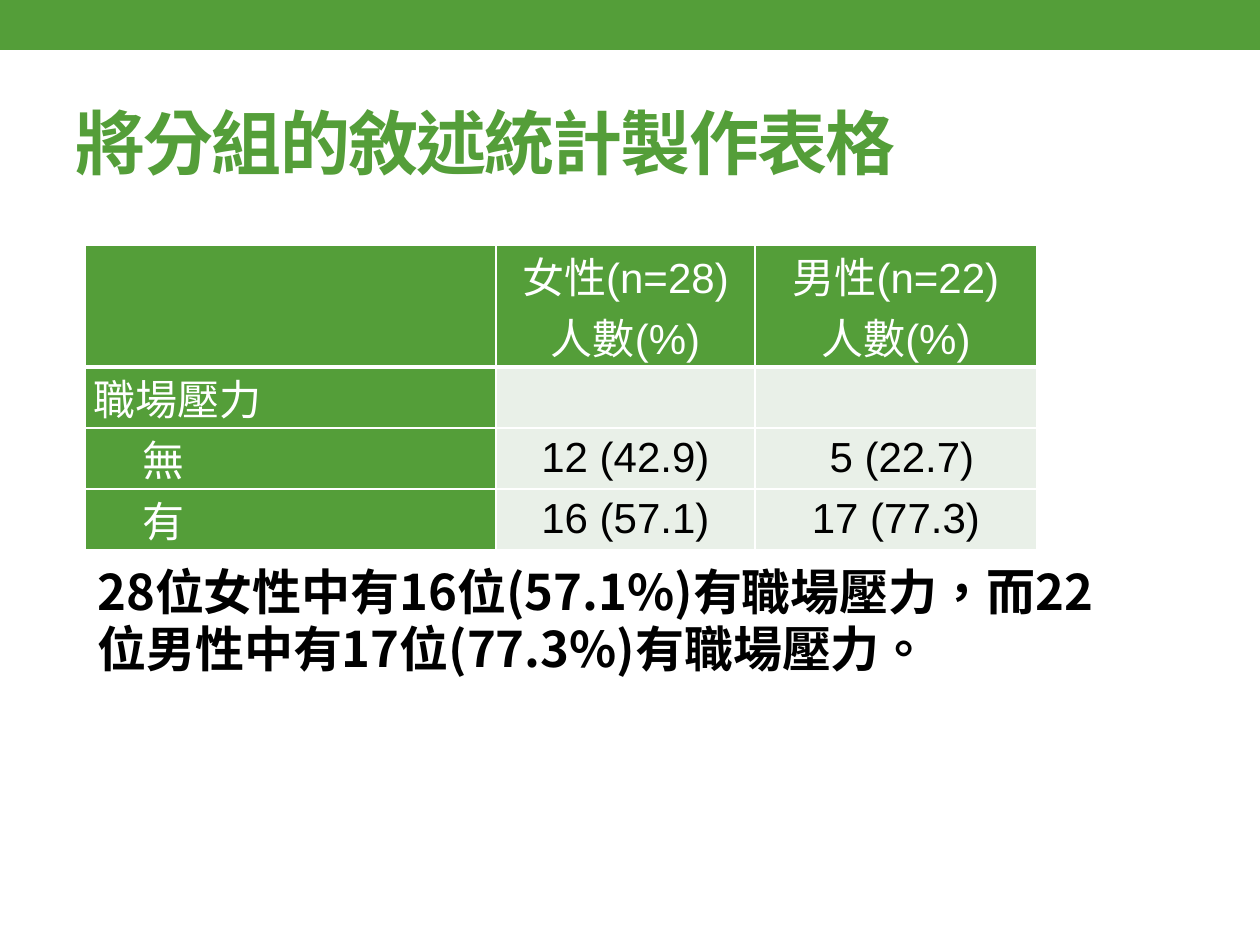
from lxml import etree
from pptx import Presentation
from pptx.dml.color import RGBColor
from pptx.enum.lang import MSO_LANGUAGE_ID
from pptx.enum.shapes import MSO_SHAPE
from pptx.enum.text import MSO_ANCHOR, PP_ALIGN
from pptx.oxml.ns import qn
from pptx.util import Emu, Pt

# Content
TITLE = "將分組的敘述統計製作表格"
ROWS = [
    ["", "女性(n=28)\n人數(%)", "男性(n=22)\n人數(%)"],
    ["職場壓力", "", ""],
    ["無", "12 (42.9)", "5 (22.7)"],
    ["有", "16 (57.1)", "17 (77.3)"],
]
SUMMARY = "28位女性中有16位(57.1%)有職場壓力，而22位男性中有17位(77.3%)有職場壓力。"

# Layout in px
PX = 914400 // 126
PAGE = (1260, 945)
BAND = (0, 0, 1260, 50)
TITLE_BOX = (63, 73, 1134, 136)
TABLE_BOX = (85, 245, 952, 303)
SUMMARY_BOX = (85, 556, 1022, 131)
COLUMN_WIDTHS = [411, 259, 282]
ROW_HEIGHTS = [121, 61, 61, 60]
CELL_INSET = 9
INDENTS = {(2, 0): 49, (3, 0): 49, (2, 2): 12}

GREEN = RGBColor(0x54, 0x9E, 0x39)
PALE = RGBColor(0xE9, 0xF0, 0xE8)
WHITE = RGBColor(0xFF, 0xFF, 0xFF)
BLACK = RGBColor(0, 0, 0)
LATIN_FONT = "Arial"
CJK_FONT = "Noto Sans CJK SC"
CHINESE = MSO_LANGUAGE_ID.TRADITIONAL_CHINESE
LEFT, CENTER = PP_ALIGN.LEFT, PP_ALIGN.CENTER
TOP, MIDDLE = MSO_ANCHOR.TOP, MSO_ANCHOR.MIDDLE
RECTANGLE = MSO_SHAPE.RECTANGLE


def emu(box):
    return [Emu(length * PX) for length in box]


def add_run(para, text, size, color, bold=False, name=LATIN_FONT):
    run = para.add_run()
    run.text = text
    font = run.font
    font.name, font.size, font.bold = name, Pt(size), bold
    font.color.rgb = color
    font.language_id = CHINESE
    return run


def set_borders(cell, bottom_width):
    properties = cell._tc.get_or_add_tcPr()
    widths = {"a:lnL": 1, "a:lnR": 1, "a:lnT": 1, "a:lnB": bottom_width}
    for index, (tag, width) in enumerate(widths.items()):
        line = etree.Element(qn(tag), w=str(Pt(width)))
        fill = etree.SubElement(line, qn("a:solidFill"))
        etree.SubElement(fill, qn("a:srgbClr"), val=str(WHITE))
        properties.insert(index, line)


def fill_cell(cell, text, row, column):
    is_header = row == 0 or column == 0
    cell.fill.solid()
    cell.fill.fore_color.rgb = GREEN if is_header else PALE
    set_borders(cell, 3 if row == 0 else 1)
    cell.margin_left = cell.margin_right = Emu(CELL_INSET * PX)
    cell.margin_top = cell.margin_bottom = 0
    cell.vertical_anchor = TOP if is_header else MIDDLE
    for index, line in enumerate(text.split("\n")):
        frame = cell.text_frame
        para = frame.add_paragraph() if index else frame.paragraphs[0]
        para.alignment = CENTER if column else LEFT
        para.font.size = Pt(24)
        indent = INDENTS.get((row, column), 0)
        para._p.get_or_add_pPr().set("marL", str(indent * PX))
        if line:
            add_run(para, line, 24, WHITE if is_header else BLACK)


deck = Presentation()
deck.slide_width, deck.slide_height = emu(PAGE)
slide = deck.slides.add_slide(deck.slide_layouts[5])

# Top band
band = slide.shapes.add_shape(RECTANGLE, *emu(BAND))
band.shadow.inherit = False
band.fill.solid()
band.fill.fore_color.rgb = GREEN
band.line.fill.background()

# Title
title = slide.shapes.title
title.left, title.top, title.width, title.height = emu(TITLE_BOX)
title.text_frame.vertical_anchor = MIDDLE
title_para = title.text_frame.paragraphs[0]
title_para.alignment = LEFT
title_run = add_run(title_para, TITLE, 40, GREEN, bold=True)
title_run.font._element.set("spc", "-100")

# Table of counts by group
table = slide.shapes.add_table(len(ROWS), len(COLUMN_WIDTHS), *emu(TABLE_BOX)).table
for column, width in zip(table.columns, emu(COLUMN_WIDTHS)):
    column.width = width
for table_row, height in zip(table.rows, emu(ROW_HEIGHTS)):
    table_row.height = height
for row, texts in enumerate(ROWS):
    for column, text in enumerate(texts):
        fill_cell(table.cell(row, column), text, row, column)

# Summary sentence
summary = slide.shapes.add_textbox(*emu(SUMMARY_BOX))
summary.text_frame.word_wrap = True
summary_para = summary.text_frame.paragraphs[0]
summary_para.line_spacing = Pt(33)
summary_run = add_run(summary_para, SUMMARY, 28, BLACK, bold=True, name=CJK_FONT)
east_asian = etree.Element(qn("a:ea"), typeface=CJK_FONT)
summary_run.font._element.find(qn("a:latin")).addnext(east_asian)

deck.save("out.pptx")
